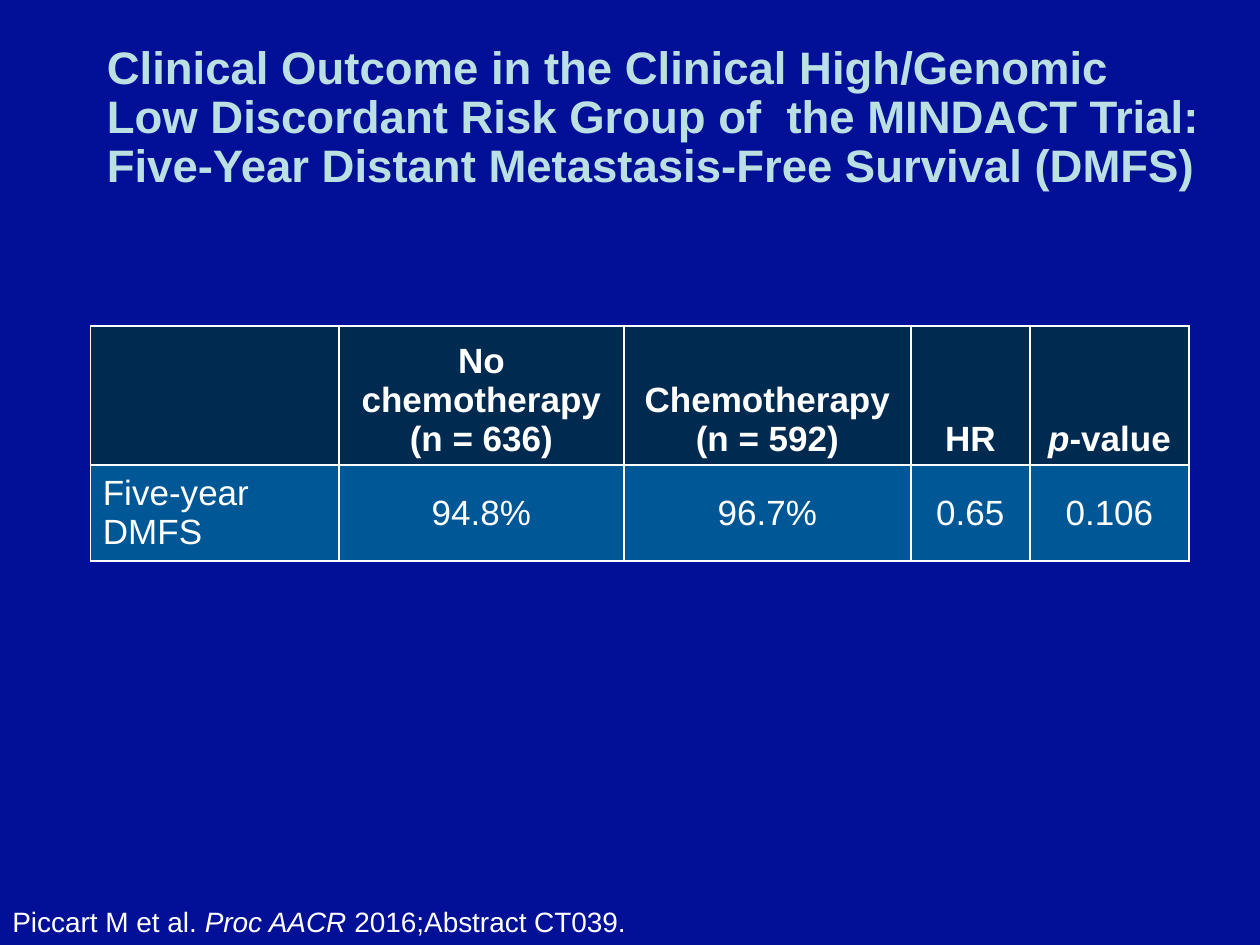
"""Build a slide with a table of five-year survival in the MINDACT trial."""
from lxml import etree
from pptx import Presentation
from pptx import util as u
from pptx.dml.color import RGBColor
from pptx.enum import text as t
from pptx.oxml.ns import qn

NAVY = RGBColor(0x01, 0x10, 0x97)
DARK = RGBColor(0x01, 0x2A, 0x50)
BLUE = RGBColor(0x00, 0x57, 0x96)
PALE = RGBColor(0xBB, 0xE0, 0xE3)
WHITE = RGBColor(0xFF, 0xFF, 0xFF)


def add_run(para, words, size, color, bold=False, slant=False):
    """Add one formatted run to a paragraph."""
    run = para.add_run()
    run.text = words
    font = run.font
    font.name, font.size = "Arial", u.Pt(size)
    font.bold, font.italic = bold, slant
    font.color.rgb = color


def add_edges(cell):
    """Draw a thin white line on each side of a cell."""
    props = cell._tc.get_or_add_tcPr()
    for spot, tag in enumerate(("a:lnL", "a:lnR", "a:lnT", "a:lnB")):
        line = etree.Element(qn(tag), w=str(u.Pt(1)))
        fill = etree.SubElement(line, qn("a:solidFill"))
        etree.SubElement(fill, qn("a:srgbClr"), val=str(WHITE))
        props.insert(spot, line)


deck = Presentation()
deck.slide_width, deck.slide_height = u.Cm(25.4), u.Cm(19.05)
slide = deck.slides.add_slide(deck.slide_layouts[5])
slide.background.fill.solid()
slide.background.fill.fore_color.rgb = NAVY

title = slide.shapes.title
title.left, title.top = u.Cm(1.9), u.Cm(0.81)
title.width, title.height = u.Cm(22.58), u.Cm(3.18)
frame = title.text_frame
frame.word_wrap = True
frame.auto_size = t.MSO_AUTO_SIZE.NONE
frame.vertical_anchor = t.MSO_ANCHOR.MIDDLE
para = frame.paragraphs[0]
para.alignment = t.PP_ALIGN.LEFT
para.line_spacing = 0.9
add_run(para, "Clinical Outcome in the Clinical High/Genomic Low Discordant "
        "Risk Group of  the MINDACT Trial: Five-Year Distant "
        "Metastasis-Free Survival (DMFS)", 26, PALE, bold=True)

rows = [
    ([[], [["No chemotherapy"], ["(n = 636)"]],
      [["Chemotherapy"], ["(n = 592)"]], [["HR"]], [["p", "-value"]]],
     DARK, t.MSO_ANCHOR.BOTTOM, 2.8),
    ([[["Five-year DMFS"]], [["94.8%"]], [["96.7%"]], [["0.65"]], [["0.106"]]],
     BLUE, t.MSO_ANCHOR.MIDDLE, 1.94),
]
wide = [5.01, 5.75, 5.78, 2.4, 3.21]
table = slide.shapes.add_table(
    len(rows), len(wide), u.Cm(1.82), u.Cm(6.57),
    u.Cm(sum(wide)), u.Cm(sum(row[3] for row in rows))).table
table.horz_banding = False
for col, width in zip(table.columns, wide):
    col.width = u.Cm(width)

for r, (cells, color, anchor, high) in enumerate(rows):
    table.rows[r].height = u.Cm(high)
    for c, lines in enumerate(cells):
        cell = table.cell(r, c)
        cell.fill.solid()
        cell.fill.fore_color.rgb = color
        cell.vertical_anchor = anchor
        add_edges(cell)
        for n, parts in enumerate(lines):
            frame = cell.text_frame
            para = frame.add_paragraph() if n else frame.paragraphs[0]
            para.alignment = t.PP_ALIGN.CENTER if c else t.PP_ALIGN.LEFT
            for part in parts:
                add_run(para, part, 20, WHITE, bold=r == 0, slant=part == "p")

cite = slide.shapes.add_textbox(u.Cm(0), u.Cm(18.11), u.Cm(24.84), u.Cm(0.94))
frame = cite.text_frame
frame.word_wrap = True
frame.auto_size = t.MSO_AUTO_SIZE.SHAPE_TO_FIT_TEXT
para = frame.paragraphs[0]
add_run(para, "Piccart M et al. ", 16, WHITE)
add_run(para, "Proc AACR", 16, WHITE, slant=True)
add_run(para, " 2016;Abstract CT039.", 16, WHITE)

deck.save("out.pptx")
